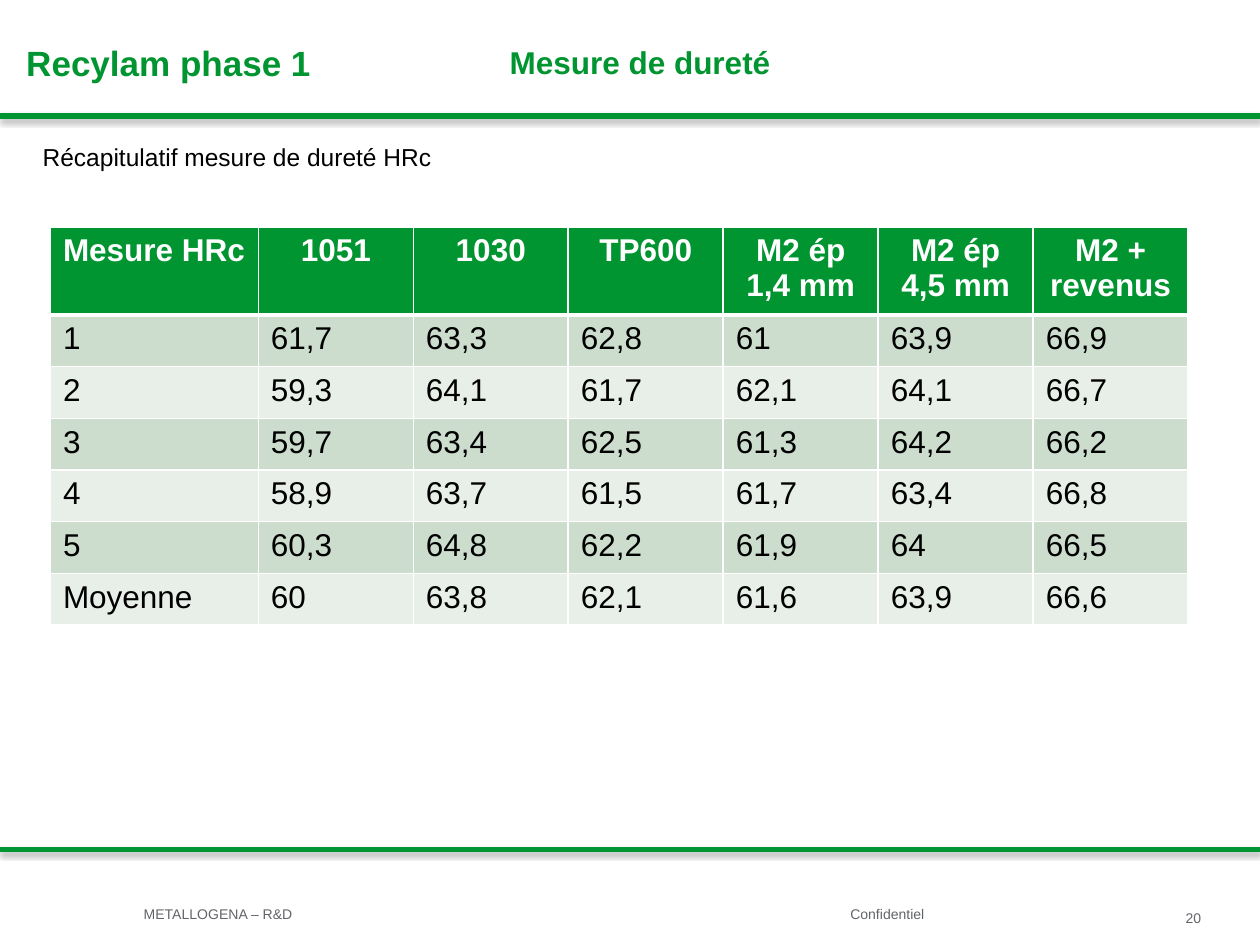
from lxml.etree import SubElement
from pptx import Presentation
from pptx.dml.color import RGBColor
from pptx.enum.shapes import MSO_CONNECTOR, MSO_SHAPE
from pptx.enum.text import MSO_ANCHOR, MSO_AUTO_SIZE, PP_ALIGN
from pptx.oxml.ns import qn
from pptx.util import Inches, Pt

GREEN = RGBColor(0x00, 0x95, 0x30)
WHITE = RGBColor(0xFF, 0xFF, 0xFF)
BLACK = RGBColor(0x00, 0x00, 0x00)
GREY = RGBColor(0x62, 0x64, 0x69)
BANDS = [RGBColor(0xCC, 0xDD, 0xCD), RGBColor(0xE7, 0xEF, 0xE8)]

# Content
TITLE = "Mesure de dureté"
PROJECT = "Recylam phase 1"
SUMMARY = "Récapitulatif mesure de dureté HRc"
FOOTERS = [  # text, left, top, width, height, inset
    ("20", 9.41, 7.22, 0.32, 0.08, 0),
    ("METALLOGENA – R&D", 1.14, 7.19, 3.3, 0.13, 0),
    ("Confidentiel", 6.65, 7.14, 2.76, 0.24, None),
]
RULE_TOPS = [0.92, 6.74]
HEADER = ["Mesure HRc", "1051", "1030", "TP600",
          "M2 ép 1,4 mm", "M2 ép 4,5 mm", "M2 + revenus"]
MEASURES = [
    ["1", "61,7", "63,3", "62,8", "61", "63,9", "66,9"],
    ["2", "59,3", "64,1", "61,7", "62,1", "64,1", "66,7"],
    ["3", "59,7", "63,4", "62,5", "61,3", "64,2", "66,2"],
    ["4", "58,9", "63,7", "61,5", "61,7", "63,4", "66,8"],
    ["5", "60,3", "64,8", "62,2", "61,9", "64", "66,5"],
    ["Moyenne", "60", "63,8", "62,1", "61,6", "63,9", "66,6"],
]
FIRST_COLUMN, OTHER_COLUMN = 1.65, 1.23
HEADER_HEIGHT, ROW_HEIGHT = 0.69, 0.41


def write(frame, text, size=14, color=BLACK, bold=False, align=PP_ALIGN.LEFT):
    paragraph = frame.paragraphs[0]
    paragraph.alignment = align
    run = paragraph.add_run()
    run.text = text
    run.font.name = "Arial"
    run.font.size = Pt(size)
    run.font.bold = bold
    run.font.color.rgb = color


def set_insets(frame, horizontal, vertical):
    frame.margin_left = frame.margin_right = Inches(horizontal)
    frame.margin_top = frame.margin_bottom = Inches(vertical)


def add_text(slide, text, left, top, width, height, inset=None, **text_format):
    box = slide.shapes.add_textbox(
        Inches(left), Inches(top), Inches(width), Inches(height))
    frame = box.text_frame
    frame.word_wrap = True
    if inset is not None:
        set_insets(frame, inset, inset)
    write(frame, text, **text_format)


def add_rule(slide, top):
    """Draw a full-width green line with a soft shadow below it."""
    rule = slide.shapes.add_connector(
        MSO_CONNECTOR.STRAIGHT, 0, Inches(top), Inches(10), Inches(top))
    rule.line.color.rgb = GREEN
    rule.line.width = Pt(3)
    effects = SubElement(rule._element.spPr, qn("a:effectLst"))
    shadow = SubElement(effects, qn("a:outerShdw"), blurRad=str(Pt(3.1)),
                        dist=str(Pt(1.8)), dir="5400000", rotWithShape="0")
    color = SubElement(shadow, qn("a:srgbClr"), val=str(BLACK))
    SubElement(color, qn("a:alpha"), val="35000")


def set_borders(cell, **widths):
    properties = cell._tc.get_or_add_tcPr()
    for side in ("L", "R", "T", "B"):
        line = SubElement(properties, qn(f"a:ln{side}"),
                          w=str(Pt(widths.get(side, 1))))
        fill = SubElement(line, qn("a:solidFill"))
        SubElement(fill, qn("a:srgbClr"), val=str(WHITE))


def add_measure_table(slide):
    rows = [HEADER] + MEASURES
    widths = [FIRST_COLUMN] + [OTHER_COLUMN] * (len(HEADER) - 1)
    heights = [HEADER_HEIGHT] + [ROW_HEIGHT] * len(MEASURES)
    table = slide.shapes.add_table(
        len(rows), len(HEADER), Inches(0.4), Inches(1.8),
        Inches(sum(widths)), Inches(sum(heights))).table
    for column, width in zip(table.columns, widths):
        column.width = Inches(width)
    for r, (values, height) in enumerate(zip(rows, heights)):
        table.rows[r].height = Inches(height)
        is_header = r == 0
        for c, value in enumerate(values):
            cell = table.cell(r, c)
            set_borders(cell, T=3 if r == 1 else 1, B=3 if is_header else 1)
            cell.fill.solid()
            cell.fill.fore_color.rgb = GREEN if is_header else BANDS[(r - 1) % 2]
            centred = is_header and c > 0
            write(cell.text_frame, value, size=18, bold=is_header,
                  color=WHITE if is_header else BLACK,
                  align=PP_ALIGN.CENTER if centred else PP_ALIGN.LEFT)


def main():
    presentation = Presentation()
    presentation.slide_width, presentation.slide_height = Inches(10), Inches(7.5)
    slide = presentation.slides.add_slide(presentation.slide_layouts[5])

    # Footer and rules
    for text, left, top, width, height, inset in FOOTERS:
        add_text(slide, text, left, top, width, height, inset, size=8, color=GREY)
    for top in RULE_TOPS:
        add_rule(slide, top)

    # Project name
    label = slide.shapes.add_shape(
        MSO_SHAPE.RECTANGLE, Inches(0.11), Inches(0.28), Inches(2.92), Inches(0.44))
    label.shadow.inherit = False
    label.fill.solid()
    label.fill.fore_color.rgb = WHITE
    label.line.fill.background()
    write(label.text_frame, PROJECT, size=20, color=GREEN, bold=True)

    # Summary and table
    add_text(slide, SUMMARY, 0.24, 1.08, 8.43, 0.57)
    add_measure_table(slide)

    # Title
    title = slide.shapes.title
    title.left, title.top = Inches(2.67), Inches(0.08)
    title.width, title.height = Inches(4.82), Inches(0.83)
    frame = title.text_frame
    frame.auto_size = MSO_AUTO_SIZE.NONE
    frame.vertical_anchor = MSO_ANCHOR.MIDDLE
    set_insets(frame, 0, 0.01)
    write(frame, TITLE, size=18, color=GREEN, bold=True, align=PP_ALIGN.CENTER)

    presentation.save("out.pptx")


if __name__ == "__main__":
    main()
